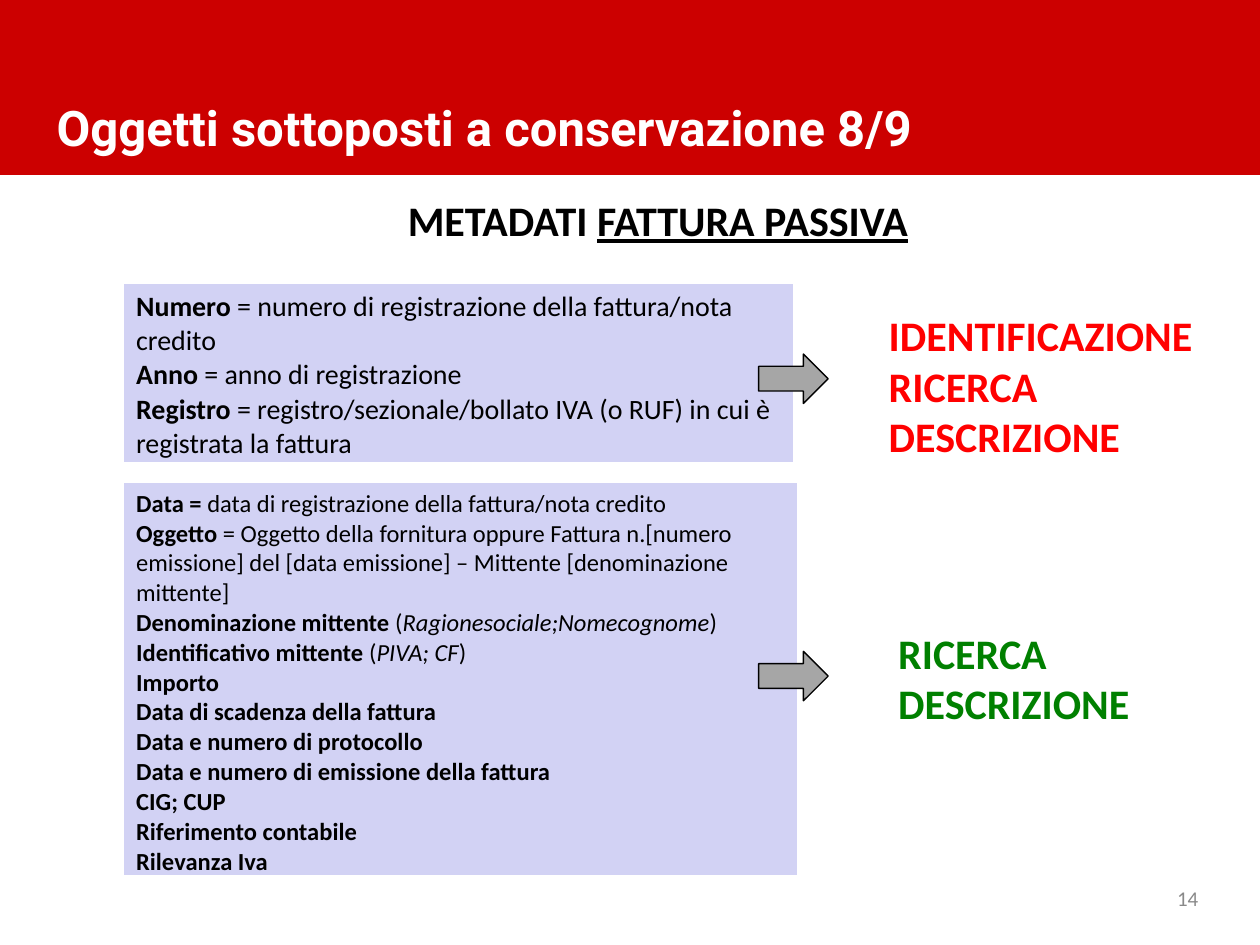
from lxml.etree import SubElement
from pptx import Presentation
from pptx.dml.color import RGBColor
from pptx.enum.shapes import MSO_SHAPE
from pptx.enum.text import MSO_ANCHOR, PP_ALIGN
from pptx.oxml.ns import qn
from pptx.util import Pt

WHITE = RGBColor(0xFF, 0xFF, 0xFF)
BLACK = RGBColor(0, 0, 0)
BAND_RED = RGBColor(0xCC, 0, 0)
LABEL_RED = RGBColor(0xFF, 0, 0)
LABEL_GREEN = RGBColor(0, 0x80, 0)
LILAC = RGBColor(0xD2, 0xD2, 0xF4)
ARROW_GRAY = RGBColor(0xA6, 0xA6, 0xA6)
NUMBER_GRAY = RGBColor(0x89, 0x89, 0x89)

TITLE = "Oggetti sottoposti a conservazione 8/9"
HEADING = [[("METADATI ", "b"), ("FATTURA PASSIVA", "bu")]]
PAGE_NUMBER = [[("14", "")]]

KEY_FIELDS = [
    [("Numero", "b"), (" = numero di registrazione della fattura/nota credito", "")],
    [("Anno", "b"), (" = anno di registrazione", "")],
    [("Registro ", "b"),
     ("= registro/sezionale/bollato IVA (o RUF) in cui è registrata la fattura", "")],
]
OTHER_FIELDS = [
    [("Data = ", "b"), ("data di registrazione della fattura/nota credito", "")],
    [("Oggetto", "b"),
     (" = Oggetto della fornitura oppure Fattura n.[numero emissione] del "
      "[data emissione] – Mittente [denominazione mittente]", "")],
    [("Denominazione mittente ", "b"), ("(", ""), ("Ragionesociale;Nomecognome", "i"), (")", "")],
    [("Identificativo mittente ", "b"), ("(", ""), ("PIVA; CF", "i"), (")", "")],
] + [[(name, "b")] for name in (
    "Importo",
    "Data di scadenza della fattura",
    "Data e numero di protocollo",
    "Data e numero di emissione della fattura",
    "CIG; CUP",
    "Riferimento contabile",
    "Rilevanza Iva",
)]
KEY_USES = [[(use, "b")] for use in ("IDENTIFICAZIONE", "RICERCA", "DESCRIZIONE")]
OTHER_USES = [[(use, "b")] for use in ("RICERCA", "DESCRIZIONE")]

GROUPS = [
    dict(fields=KEY_FIELDS, table=(70.6, 162, 383, 103), size=16, arrow_top=202.3,
         uses=KEY_USES, label=(500.8, 173.5, 219, 94.3), color=LABEL_RED),
    dict(fields=OTHER_FIELDS, table=(70.6, 275.8, 385.2, 225.4), size=14, arrow_top=372.2,
         uses=OTHER_USES, label=(506.2, 355, 200, 65.5), color=LABEL_GREEN),
]
BORDERS = {"a:lnL": 1, "a:lnR": 1, "a:lnT": 1, "a:lnB": 3}


def points(*lengths):
    return [Pt(length) for length in lengths]


def write(frame, lines, size, color, align=PP_ALIGN.LEFT):
    for index, line in enumerate(lines):
        para = frame.paragraphs[0] if index == 0 else frame.add_paragraph()
        para.alignment = align
        para.font.name = "Calibri"
        para.font.size = Pt(size)
        para.font.color.rgb = color
        for text, style in line:
            span = para.add_run()
            span.text = text
            span.font.bold = "b" in style
            span.font.italic = "i" in style
            span.font.underline = "u" in style


def add_text(page, place, lines, size, color, align=PP_ALIGN.LEFT):
    box = page.shapes.add_textbox(*points(*place))
    box.text_frame.word_wrap = True
    write(box.text_frame, lines, size, color, align)
    return box


def add_preset(page, kind, place, fill):
    shape = page.shapes.add_shape(kind, *points(*place))
    shape.shadow.inherit = False
    shape.fill.solid()
    shape.fill.fore_color.rgb = fill
    return shape


def add_field_table(page, place, lines, size):
    table = page.shapes.add_table(1, 1, *points(*place)).table
    table.first_row = table.horz_banding = False
    cell = table.cell(0, 0)
    write(cell.text_frame, lines, size, BLACK)
    properties = cell._tc.get_or_add_tcPr()
    for tag, width in BORDERS.items():
        border = SubElement(properties, qn(tag), w=str(Pt(width)))
        fill = SubElement(border, qn("a:solidFill"))
        SubElement(fill, qn("a:srgbClr"), val=str(WHITE))
    cell.fill.solid()
    cell.fill.fore_color.rgb = LILAC


def add_title(page):
    band = add_preset(page, MSO_SHAPE.RECTANGLE, (0, 0, 723, 100), BAND_RED)
    band.line.fill.background()
    title = page.shapes.title
    title.element.addprevious(band.element)
    title.left, title.top, title.width, title.height = points(25.2, 49, 647.3, 47.5)
    title.text_frame.text = TITLE
    title.text_frame.vertical_anchor = MSO_ANCHOR.MIDDLE
    para = title.text_frame.paragraphs[0]
    para.alignment = PP_ALIGN.LEFT
    para.font.name = "Roboto"
    para.font.size = Pt(28)
    para.font.bold = True
    para.font.color.rgb = WHITE


def main():
    deck = Presentation()
    deck.slide_width, deck.slide_height = points(720, 540)
    page = deck.slides.add_slide(deck.slide_layouts[5])
    add_title(page)
    add_text(page, (39.5, 107.5, 673, 38), HEADING, 24, BLACK, PP_ALIGN.CENTER)
    for group in GROUPS:
        add_field_table(page, group["table"], group["fields"], group["size"])
        arrow = add_preset(page, MSO_SHAPE.RIGHT_ARROW,
                           (433.5, group["arrow_top"], 39.7, 28.3), ARROW_GRAY)
        arrow.line.color.rgb = BLACK
        arrow.line.width = Pt(0.75)
        add_text(page, group["label"], group["uses"], 24, group["color"])
    number = add_text(page, (660.2, 499, 31.7, 28.8), PAGE_NUMBER, 12,
                      NUMBER_GRAY, PP_ALIGN.RIGHT)
    number.text_frame.vertical_anchor = MSO_ANCHOR.MIDDLE
    deck.save("out.pptx")


if __name__ == "__main__":
    main()
